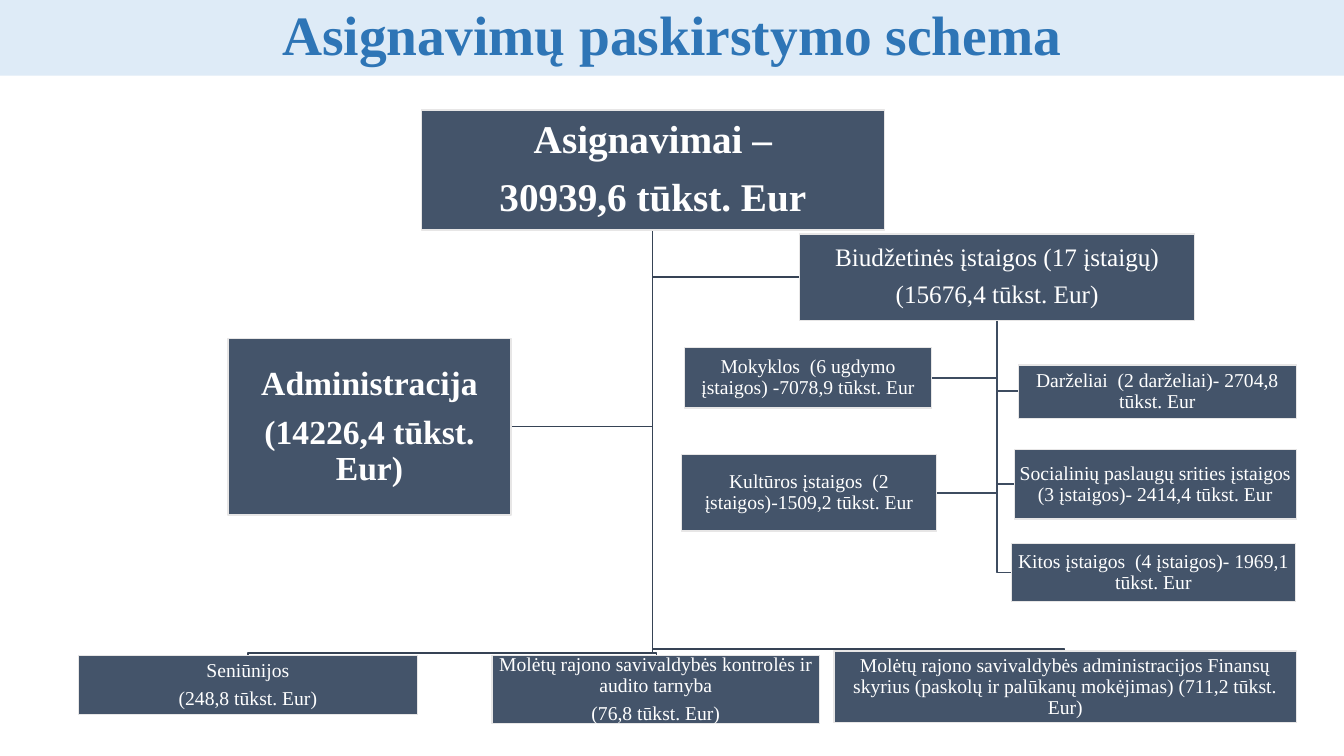
"""Builds the slide with the scheme of how appropriations are split."""
from pptx import Presentation
from pptx.dml.color import RGBColor
from pptx.enum.shapes import MSO_SHAPE
from pptx.enum.text import MSO_ANCHOR, MSO_AUTO_SIZE, PP_ALIGN
from pptx.util import Pt

PX = 9144
HUES = {"band": "DEEBF7", "head": "2E75B6", "box": "44546A", "edge": "E7E6E6",
        "text": "FFFFFF", "main": "364355", "sub": "3E4C60"}


def hue(name):
    return RGBColor.from_string(HUES[name])


def write(shape, text, size, bold, tint, inset):
    frame = shape.text_frame
    frame.text = text
    look = {"word_wrap": True, "auto_size": MSO_AUTO_SIZE.NONE,
            "vertical_anchor": MSO_ANCHOR.MIDDLE}
    for side in ("left", "right", "top", "bottom"):
        look[f"margin_{side}"] = inset * PX
    for key, val in look.items():
        setattr(frame, key, val)
    for para in frame.paragraphs:
        form = {"alignment": PP_ALIGN.CENTER, "line_spacing": 0.9,
                "space_before": Pt(0), "space_after": Pt(round(size * 0.39))}
        for key, val in form.items():
            setattr(para, key, val)
        font = para.runs[0].font
        style = {"name": "Times New Roman", "size": Pt(size), "bold": bold}
        for key, val in style.items():
            setattr(font, key, val)
        font.color.rgb = hue(tint)


deck = Presentation()
deck.slide_width, deck.slide_height = 1333 * PX, 750 * PX
slide = deck.slides.add_slide(deck.slide_layouts[5])
shapes = slide.shapes

title = shapes.title
place = {"left": 0, "top": 0, "width": 1333, "height": 75}
for key, val in place.items():
    setattr(title, key, val * PX)
title.fill.solid()
title.fill.fore_color.rgb = hue("band")
write(title, "Asignavimų paskirstymo schema", 39.6, True, "head", 5)

root, hub = (647, 228), (989, 318)
links = [
    ("sub", hub, [(989, 388), (1010, 388)]),
    ("sub", hub, [(989, 568), (1003, 568)]),
    ("sub", hub, [(989, 480), (1006, 480)]),
    ("sub", hub, [(989, 489), (929, 489)]),
    ("sub", hub, [(989, 375), (924, 375)]),
    ("main", root, [(647, 275), (793, 275)]),
    ("main", root, [(647, 423), (508, 423)]),
    ("main", root, [(647, 644), (1056, 644), (1056, 646)]),
    ("main", root, [(647, 648), (651, 648), (651, 650)]),
    ("main", root, [(647, 648), (246, 648), (246, 650)]),
]
for tint, start, points in links:
    pen = shapes.build_freeform(*start, scale=PX)
    pen.add_line_segments(points, close=False)
    link = pen.convert_to_shape()
    link.shadow.inherit = False
    link.fill.background()
    link.line.color.rgb = hue(tint)
    link.line.width = Pt(1)

boxes = [
    (418, 109, 459, 119, 28, True, "Asignavimai –\n30939,6 tūkst. Eur"),
    (78, 650, 336, 59, 14, False, "Seniūnijos\n(248,8 tūkst. Eur)"),
    (488, 650, 325, 68, 14, False,
     "Molėtų rajono savivaldybės kontrolės ir audito tarnyba\n(76,8 tūkst. Eur)"),
    (827, 646, 459, 71, 14, False,
     "Molėtų rajono savivaldybės administracijos Finansų skyrius "
     "(paskolų ir palūkanų mokėjimas) (711,2 tūkst. Eur)"),
    (226, 336, 281, 175, 24, True, "Administracija\n(14226,4 tūkst. Eur)"),
    (793, 232, 392, 86, 18, False,
     "Biudžetinės įstaigos (17 įstaigų)\n(15676,4 tūkst. Eur)"),
    (679, 345, 245, 60, 14, False,
     "Mokyklos  (6 ugdymo įstaigos) -7078,9 tūkst. Eur"),
    (676, 451, 253, 76, 14, False,
     "Kultūros įstaigos  (2 įstaigos)-1509,2 tūkst. Eur"),
    (1006, 446, 280, 69, 14, False,
     "Socialinių paslaugų srities įstaigos (3 įstaigos)- 2414,4 tūkst. Eur"),
    (1003, 539, 282, 58, 14, False,
     "Kitos įstaigos  (4 įstaigos)- 1969,1 tūkst. Eur"),
    (1010, 362, 276, 53, 14, False,
     "Darželiai  (2 darželiai)- 2704,8 tūkst. Eur"),
]
for left, top, wide, high, size, bold, text in boxes:
    box = shapes.add_shape(MSO_SHAPE.RECTANGLE, left * PX, top * PX,
                           wide * PX, high * PX)
    box.shadow.inherit = False
    box.fill.solid()
    box.fill.fore_color.rgb = hue("box")
    box.line.color.rgb = hue("edge")
    box.line.width = Pt(1)
    write(box, text, size, bold, "text", 2 if bold else 1)

deck.save("out.pptx")
